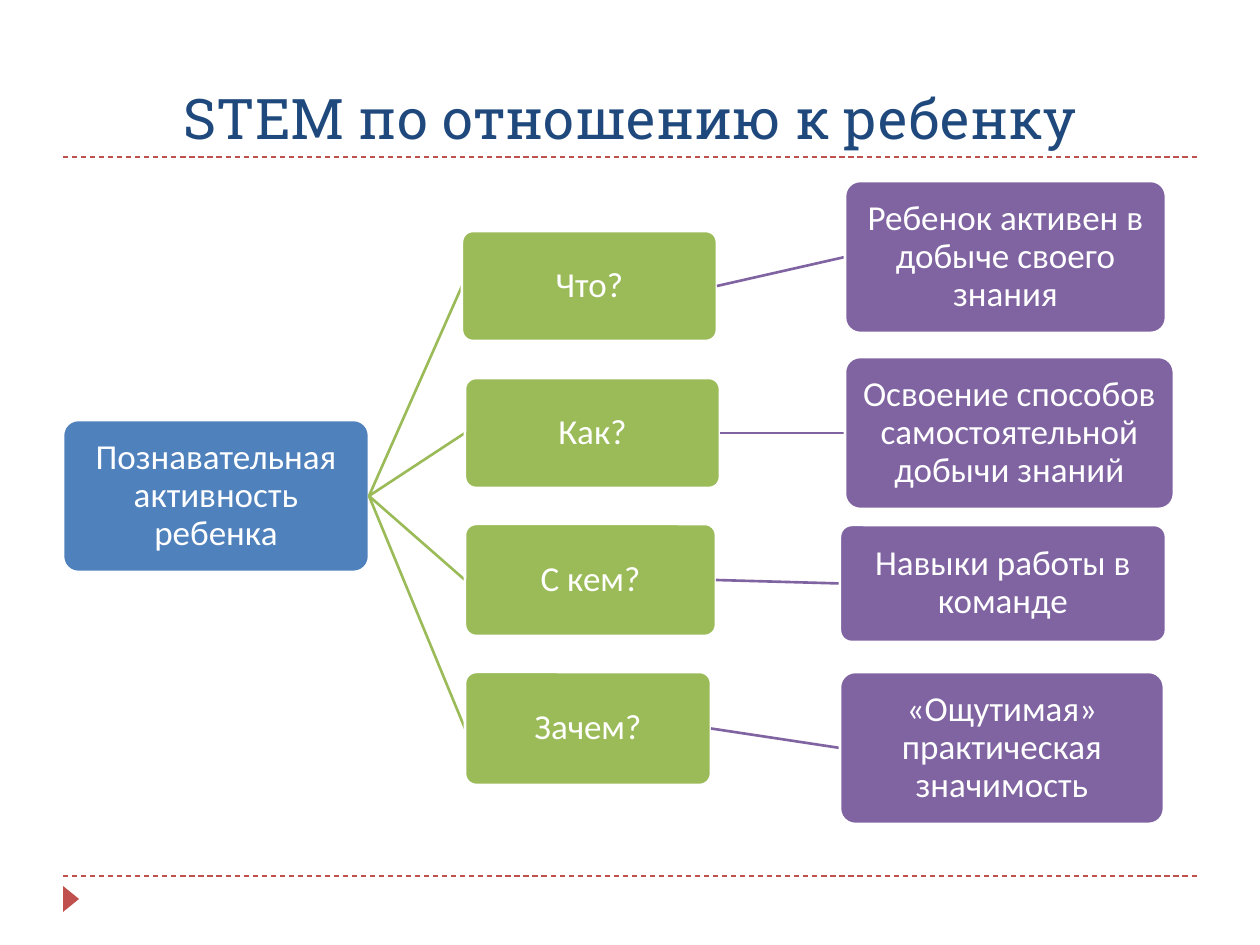
"""Build a slide with a three-level tree on STEM and the child."""
from dataclasses import dataclass

from lxml import etree
from pptx import Presentation
from pptx.dml.color import RGBColor
from pptx.enum.dml import MSO_LINE
from pptx.enum.shapes import MSO_CONNECTOR, MSO_SHAPE
from pptx.enum.text import MSO_ANCHOR, PP_ALIGN
from pptx.oxml.ns import qn
from pptx.util import Emu, Pt

STRAIGHT = MSO_CONNECTOR.STRAIGHT
ROUNDED, TRIANGLE = MSO_SHAPE.ROUNDED_RECTANGLE, MSO_SHAPE.ISOSCELES_TRIANGLE
DASH = MSO_LINE.DASH
CENTER = PP_ALIGN.CENTER
MIDDLE, BOTTOM = MSO_ANCHOR.MIDDLE, MSO_ANCHOR.BOTTOM
LEFT_SITE, RIGHT_SITE = 1, 3

HEADING = "STEM по отношению к ребенку"
ACTIVITY = ("Познавательная активность ребенка", (63, 420, 306, 152))
BRANCHES = [
    (("Что?", (462, 231, 255, 110)),
     ("Ребенок активен в добыче своего знания", (845, 181, 321, 152))),
    (("Как?", (465, 378, 255, 110)),
     ("Освоение способов самостоятельной добычи знаний", (845, 357, 329, 152))),
    (("С кем?", (465, 524, 251, 112)),
     ("Навыки работы в команде", (840, 525, 326, 117))),
    (("Зачем?", (465, 672, 246, 113)),
     ("«Ощутимая» практическая значимость", (840, 672, 324, 152))),
]
TITLE_BOX = (63, 21, 1134, 136)
RULE_LEFT, RULE_RIGHT = 63, 1197
RULE_TOPS = (157, 876)
MARKER_BOX = (58, 891, 26, 16)


@dataclass(frozen=True)
class Theme:
    title_font: str = "Roboto Slab"
    body_font: str = "Calibri"
    title_size: int = 32
    body_size: int = 20
    title: str = "1F497D"
    accent: str = "C0504D"
    activity: str = "4F81BD"
    question: str = "9BBB59"
    answer: str = "8064A2"
    white: str = "FFFFFF"
    rule_width: float = 0.75
    line_width: float = 1.5


THEME = Theme()


def px(length):
    return Emu(round(length * 914400 / 126))


def rgb(color):
    return RGBColor.from_string(color)


def write(frame, text, font, size, color, anchor):
    frame.word_wrap = True
    frame.vertical_anchor = anchor
    paragraph = frame.paragraphs[0]
    paragraph.alignment = CENTER
    run = paragraph.add_run()
    run.text = text
    run.font.name, run.font.size = font, Pt(size)
    run.font.color.rgb = rgb(color)
    return paragraph


def add_filled(slide, preset, box, color):
    shape = slide.shapes.add_shape(preset, *map(px, box))
    shape.shadow.inherit = False
    shape.fill.solid()
    shape.fill.fore_color.rgb = rgb(color)
    return shape


def add_line(slide, start, end, color, width):
    line = slide.shapes.add_connector(STRAIGHT, *map(px, start + end))
    etree.SubElement(line._element.spPr, qn("a:effectLst"))
    line.line.color.rgb = rgb(color)
    line.line.width = Pt(width)
    return line


def add_node(slide, node, color, parent=None):
    text, box = node
    shape = add_filled(slide, ROUNDED, box, color)
    shape.adjustments[0] = 0.1
    shape.line.color.rgb = rgb(THEME.white)
    shape.line.width = Pt(THEME.line_width)
    frame = shape.text_frame
    frame.margin_left = frame.margin_right = px(1)
    frame.margin_top = frame.margin_bottom = px(1)
    paragraph = write(frame, text, THEME.body_font, THEME.body_size, THEME.white, MIDDLE)
    paragraph.line_spacing = 0.9
    if parent is not None:
        link = add_line(slide, (0, 0), (0, 0), color, THEME.line_width)
        link.begin_connect(parent, RIGHT_SITE)
        link.end_connect(shape, LEFT_SITE)
        shape._element.addprevious(link._element)
    return shape


def main():
    deck = Presentation()
    deck.slide_width, deck.slide_height = px(1260), px(945)
    slide = deck.slides.add_slide(deck.slide_layouts[5])

    for top in RULE_TOPS:
        rule = add_line(slide, (RULE_LEFT, top), (RULE_RIGHT, top),
                        THEME.accent, THEME.rule_width)
        rule.line.dash_style = DASH
    marker = add_filled(slide, TRIANGLE, MARKER_BOX, THEME.accent)
    marker.line.fill.background()
    marker.rotation = 90

    title = slide.shapes.title
    title.left, title.top, title.width, title.height = map(px, TITLE_BOX)
    write(title.text_frame, HEADING, THEME.title_font, THEME.title_size,
          THEME.title, BOTTOM)

    activity = add_node(slide, ACTIVITY, THEME.activity)
    for question, answer in BRANCHES:
        question_box = add_node(slide, question, THEME.question, activity)
        add_node(slide, answer, THEME.answer, question_box)

    deck.save("out.pptx")


if __name__ == "__main__":
    main()
